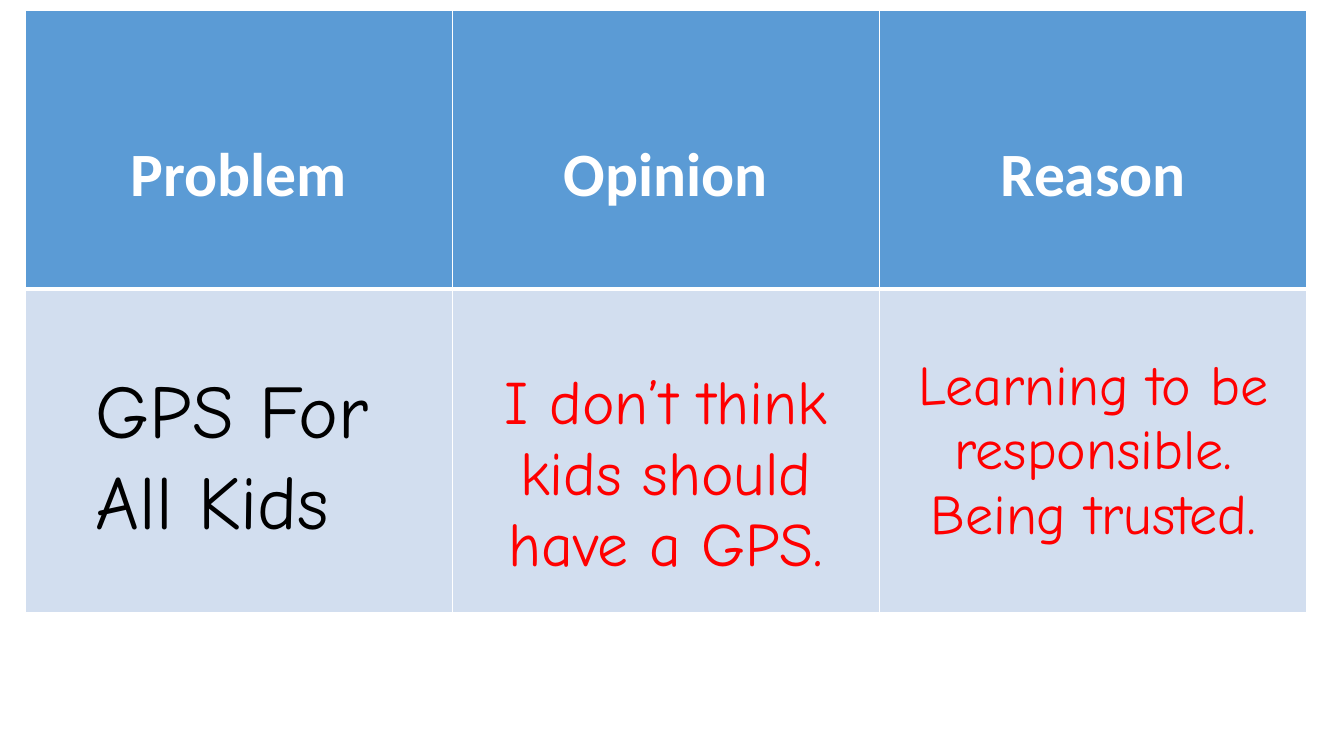
from lxml.etree import SubElement as Sub
from pptx import Presentation
from pptx.dml.color import RGBColor
from pptx.enum.text import PP_ALIGN as Align
from pptx.oxml.ns import qn
from pptx.util import Emu, Pt

SCALE = 914400 / 100.8
WHITE = RGBColor(0xFF, 0xFF, 0xFF)
BLACK = RGBColor(0, 0, 0)
RED = RGBColor(0xFF, 0, 0)
BLUE = RGBColor(0x5B, 0x9B, 0xD5)
PALE = RGBColor(0xD2, 0xDE, 0xEF)
HAND = "Comic Neue"
HEADS = ["Problem", "Opinion", "Reason"]
ROWS = [279, 324]


def px(n):
    return Emu(round(n * SCALE))


def write(frame, *lines, size, font=HAND, color=RED, bold=False, align=Align.CENTER):
    frame.word_wrap = True
    for i, line in enumerate(lines):
        para = frame.add_paragraph() if i else frame.paragraphs[0]
        para.alignment = align
        run = para.add_run()
        run.text = line
        run.font.size = Pt(size)
        run.font.name = font
        run.font.bold = bold
        run.font.color.rgb = color


def edge(cell, **sides):
    props = cell._tc.get_or_add_tcPr()
    for side, width in sides.items():
        line = Sub(props, qn(f"a:ln{side}"), w=str(Pt(width)))
        fill = Sub(line, qn("a:solidFill"))
        Sub(fill, qn("a:srgbClr"), val=str(WHITE))


def style(cell, fill, top, **sides):
    edge(cell, **sides)
    cell.fill.solid()
    cell.fill.fore_color.rgb = fill
    cell.margin_top = px(top)


def chart(slide, x, y, w):
    frame = slide.shapes.add_table(2, 3, px(x), px(y), px(w), px(sum(ROWS)))
    table = frame.table
    for row, high in zip(table.rows, ROWS):
        row.height = px(high)
    for col in table.columns:
        col.width = px(w / 3)
    for i, head in enumerate(HEADS):
        cell = table.cell(0, i)
        style(cell, BLUE, 128, L=1, R=1, T=1, B=3)
        write(cell.text_frame, head, size=44, font="Calibri", color=WHITE, bold=True)
    for i, top in enumerate([5, 80, 66]):
        style(table.cell(1, i), PALE, top, L=1, R=1, T=3, B=1)
    write(table.cell(1, 1).text_frame, "I don’t think kids should have a GPS.", size=44)
    write(table.cell(1, 2).text_frame, "Learning to be responsible.", "Being trusted.", size=40)


def topic(slide, x, y, w, h):
    box = slide.shapes.add_textbox(px(x), px(y), px(w), px(h))
    write(box.text_frame, "GPS For All Kids", size=54, color=BLACK, align=Align.LEFT)


def main():
    deck = Presentation()
    deck.slide_width, deck.slide_height = px(1344), px(756)
    slide = deck.slides.add_slide(deck.slide_layouts[6])
    chart(slide, 25, 10, 1282)
    topic(slide, 86, 358, 341, 194)
    deck.save("out.pptx")


if __name__ == "__main__":
    main()
